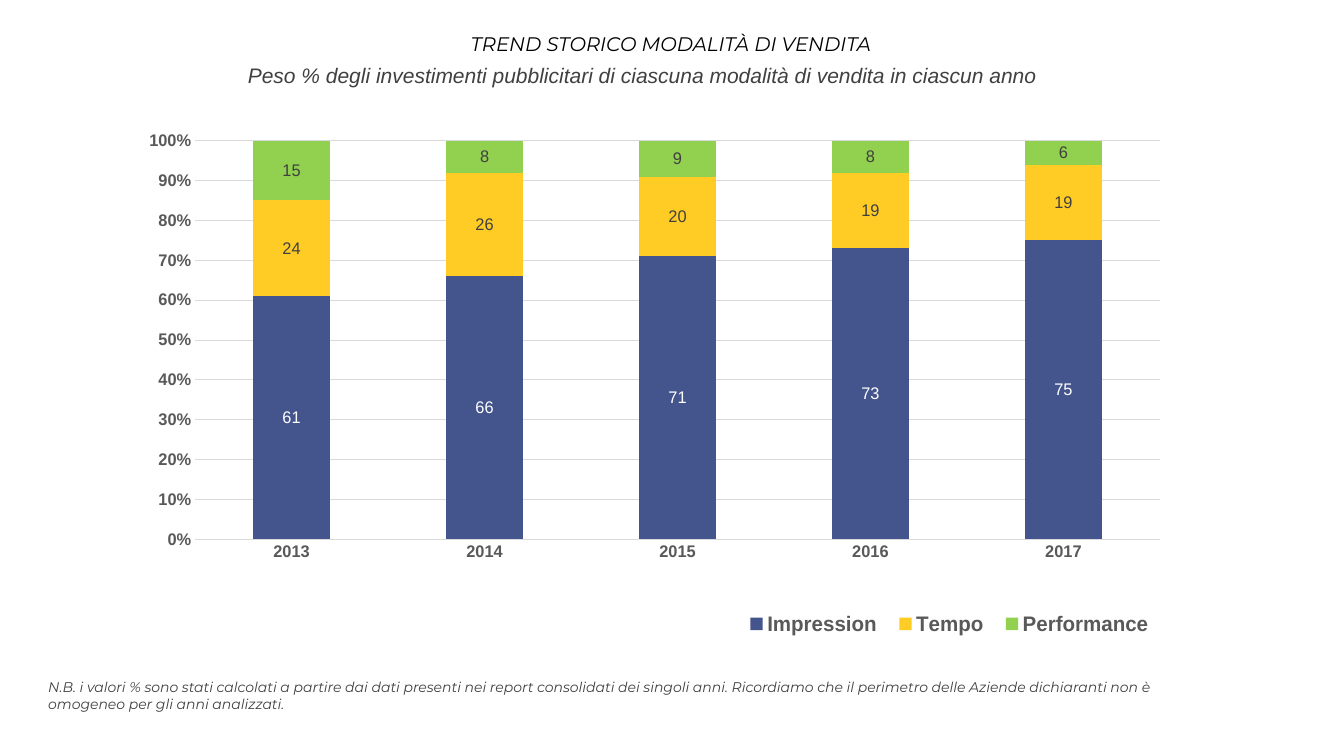
from lxml import etree
from pptx import Presentation
from pptx.chart.data import CategoryChartData
from pptx.dml.color import RGBColor
from pptx.enum.chart import (XL_CHART_TYPE as ChartType, XL_LABEL_POSITION as LabelPos,
                             XL_LEGEND_POSITION as LegendPos, XL_TICK_MARK as Tick)
from pptx.enum.text import MSO_ANCHOR as Anchor, PP_ALIGN as Align
from pptx.oxml.ns import qn
from pptx.util import Inches, Pt

BLACK = RGBColor(0x00, 0x00, 0x00)
WHITE = RGBColor(0xFF, 0xFF, 0xFF)
DARK = RGBColor(0x40, 0x40, 0x40)
GREY = RGBColor(0x59, 0x59, 0x59)
RULE = RGBColor(0xD9, 0xD9, 0xD9)
BLUE = RGBColor(0x44, 0x54, 0x8C)
YELLOW = RGBColor(0xFF, 0xCB, 0x25)
GREEN = RGBColor(0x92, 0xD0, 0x50)

TITLE = "TREND STORICO MODALITÀ DI VENDITA"
SUBTITLE = "Peso % degli investimenti pubblicitari di ciascuna modalità di vendita in ciascun anno"
NOTE = ("N.B. i valori % sono stati calcolati a partire dai dati presenti nei report consolidati "
        "dei singoli anni. Ricordiamo che il perimetro delle Aziende dichiaranti non è omogeneo "
        "per gli anni analizzati.")
YEARS = ["2013", "2014", "2015", "2016", "2017"]
# name, percentages by year, bar colour, label colour
SALES_MODES = [
    ("Impression", [61, 66, 71, 73, 75], BLUE, WHITE),
    ("Tempo", [24, 26, 20, 19, 19], YELLOW, DARK),
    ("Performance", [15, 8, 9, 8, 6], GREEN, DARK),
]

# left, top, width, height in inches
TITLE_BOX = (2.3, 0.19, 8.71, 0.48)
SUBTITLE_BOX = (2.36, 0.57, 8.74, 0.35)
CHART_BOX = (1.48, 1.13, 10.37, 5.44)
NOTE_BOX = (0.38, 6.68, 11.75, 0.44)
# x, y, w, h as shares of the chart
PLOT_AREA = (0.022, 0.049, 0.944, 0.727)
LEGEND_AREA = (0.55, 0.89, 0.42, 0.08)


def set_font(font, size, color, name="Arial", bold=False, italic=False):
    font.name, font.size, font.bold, font.italic = name, Pt(size), bold, italic
    font.color.rgb = color


def add_text(slide, box, text, size, color, font_name):
    tf = slide.shapes.add_textbox(*map(Inches, box)).text_frame
    tf.word_wrap = True
    r = tf.paragraphs[0].add_run()
    r.text = text
    set_font(r.font, size, color, font_name, italic=True)
    return tf


def place(parent, area, position, inner=False):
    """Give a chart part a manual layout, as the child at the given position."""
    for old in parent.findall(qn("c:layout")):
        parent.remove(old)
    layout = etree.Element(qn("c:layout"))
    manual = etree.SubElement(layout, qn("c:manualLayout"))
    settings = [("layoutTarget", "inner")] if inner else []
    settings += [("xMode", "edge"), ("yMode", "edge"), *zip("xywh", area)]
    for tag, value in settings:
        etree.SubElement(manual, qn(f"c:{tag}")).set("val", str(value))
    parent.insert(position, layout)


def style_axis(axis):
    axis.major_tick_mark = axis.minor_tick_mark = Tick.NONE
    set_font(axis.tick_labels.font, 12, GREY, bold=True)


def draw_rule(line):
    line.color.rgb = RULE
    line.width = Pt(0.75)


def add_sales_chart(slide):
    data = CategoryChartData(number_format="0%")
    data.categories = YEARS
    for name, shares, _, _ in SALES_MODES:
        data.add_series(name, [share / 100 for share in shares])
    chart = slide.shapes.add_chart(ChartType.COLUMN_STACKED, *map(Inches, CHART_BOX), data).chart
    set_font(chart.font, 10, BLACK)
    chart.has_title = False

    plot = chart.plots[0]
    plot.gap_width, plot.overlap, plot.vary_by_categories = 150, 100, False
    for ser, (_, shares, color, label_color) in zip(plot.series, SALES_MODES):
        ser.format.fill.solid()
        ser.format.fill.fore_color.rgb = color
        labels = ser.data_labels
        labels.show_value, labels.position = True, LabelPos.CENTER
        set_font(labels.font, 12, label_color, bold=True)
        for i, share in enumerate(shares):
            label = ser.points[i].data_label
            r = label.text_frame.paragraphs[0].add_run()
            r.text = str(share)
            set_font(r.font, 12, label_color)
            label.position = LabelPos.CENTER

    years, percent = chart.category_axis, chart.value_axis
    style_axis(years)
    draw_rule(years.format.line)
    style_axis(percent)
    percent.format.line.fill.background()
    percent.minimum_scale, percent.maximum_scale, percent.major_unit = 0, 1, 0.1
    percent.tick_labels.number_format = "0%"
    percent.tick_labels.number_format_is_linked = False
    draw_rule(percent.major_gridlines.format.line)

    chart.has_legend = True
    chart.legend.position = LegendPos.BOTTOM
    chart.legend.include_in_layout = False
    set_font(chart.legend.font, 15, GREY, bold=True)
    place(chart.element.find(".//" + qn("c:plotArea")), PLOT_AREA, 0, inner=True)
    place(chart.element.find(".//" + qn("c:legend")), LEGEND_AREA, 1)


def main():
    prs = Presentation()
    prs.slide_width, prs.slide_height = Inches(13.33), Inches(7.5)
    slide = prs.slides.add_slide(prs.slide_layouts[6])
    tf = add_text(slide, TITLE_BOX, TITLE, 14, BLACK, "Montserrat")
    tf.margin_left = tf.margin_right = tf.margin_top = tf.margin_bottom = 0
    tf.vertical_anchor = Anchor.MIDDLE
    tf.paragraphs[0].alignment = Align.CENTER
    add_sales_chart(slide)
    add_text(slide, SUBTITLE_BOX, SUBTITLE, 15, DARK, "Arial")
    add_text(slide, NOTE_BOX, NOTE, 10, DARK, "Montserrat")
    prs.save("out.pptx")


if __name__ == "__main__":
    main()
